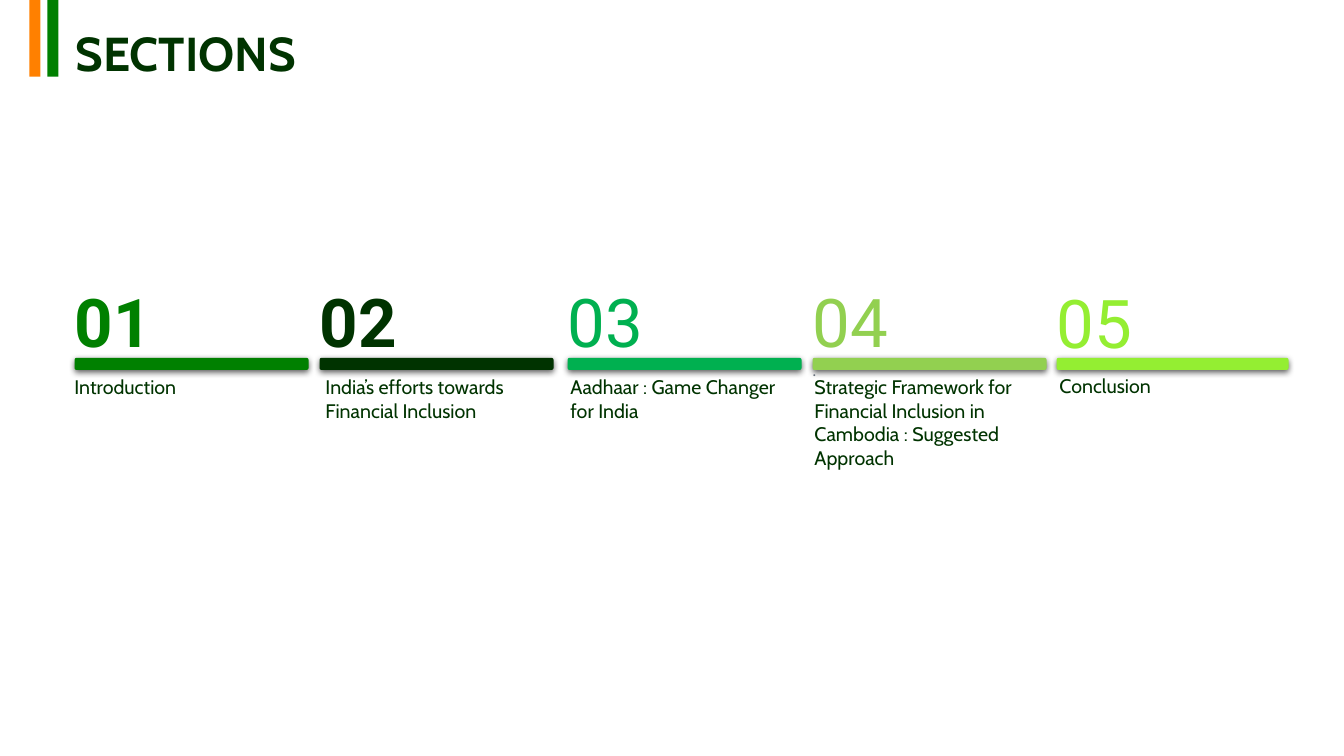
"""Build the SECTIONS agenda slide with five numbered, coloured bars."""
from dataclasses import dataclass

from lxml import etree
from pptx import Presentation
from pptx.dml.color import RGBColor
from pptx.enum.shapes import MSO_SHAPE as Preset
from pptx.enum.text import MSO_ANCHOR as Anchor
from pptx.enum.text import MSO_AUTO_SIZE as AutoSize
from pptx.enum.text import PP_ALIGN as Align
from pptx.oxml.ns import qn
from pptx.util import Emu, Pt

EMU_PER_PX = 9144
COLOURS = {
    "orange": "FF8000",
    "green": "008000",
    "dark": "003300",
    "emerald": "00B050",
    "lime": "92D050",
    "bright": "94EE32",
    "grey": "656D78",
    "black": "000000",
}


@dataclass(frozen=True)
class Box:
    left: int
    top: int
    width: int
    height: int

    def emu(self) -> list[Emu]:
        return [Emu(px * EMU_PER_PX) for px in (self.left, self.top, self.width, self.height)]


@dataclass(frozen=True)
class Section:
    label: str
    colour: str
    bar: Box
    number_box: Box
    label_box: Box
    bold: bool = False
    wrap: bool = True
    mark: str = ""


SECTIONS = [
    Section("Introduction", "green", Box(74, 355, 232, 12),
            Box(74, 278, 166, 192), Box(64, 367, 126, 34), bold=True, wrap=False),
    Section("India’s efforts towards Financial Inclusion", "dark", Box(317, 355, 232, 12),
            Box(317, 278, 180, 192), Box(313, 367, 237, 81), bold=True),
    Section("Aadhaar : Game Changer for India", "emerald", Box(563, 355, 232, 12),
            Box(563, 278, 159, 192), Box(556, 367, 237, 57)),
    Section("Strategic Framework for Financial Inclusion in Cambodia : Suggested Approach",
            "lime", Box(806, 355, 232, 12),
            Box(806, 278, 185, 193), Box(798, 367, 237, 151), mark="."),
    Section("Conclusion", "bright", Box(1048, 355, 230, 12),
            Box(1048, 279, 144, 192), Box(1041, 366, 113, 34), wrap=False),
]
STRIPES = {"orange": Box(29, 0, 11, 76), "green": Box(47, 0, 11, 76)}


def rgb(colour: str) -> RGBColor:
    return RGBColor.from_string(COLOURS[colour])


def write(paragraph, text: str, colour: str, **font_format) -> None:
    run = paragraph.add_run()
    run.text = text
    run.font.color.rgb = rgb(colour)
    for name, value in font_format.items():
        setattr(run.font, name, value)


def add_block(slide, preset: Preset, box: Box, colour: str):
    shape = slide.shapes.add_shape(preset, *box.emu())
    shape.shadow.inherit = False
    shape.fill.solid()
    shape.fill.fore_color.rgb = rgb(colour)
    shape.line.fill.background()
    return shape


def add_bar(slide, box: Box, colour: str) -> None:
    bar = add_block(slide, Preset.ROUNDED_RECTANGLE, box, colour)
    effects = bar.element.spPr.find(qn("a:effectLst"))
    shadow = etree.SubElement(effects, qn("a:outerShdw"), blurRad=str(Pt(4.5)),
                              dist=str(Pt(1.5)), dir="5400000", algn="t", rotWithShape="0")
    tint = etree.SubElement(shadow, qn("a:srgbClr"), val=COLOURS["black"])
    etree.SubElement(tint, qn("a:alpha"), val="63000")


def add_text_frame(slide, box: Box, **frame_format):
    frame = slide.shapes.add_textbox(*box.emu()).text_frame
    for name, value in frame_format.items():
        setattr(frame, name, value)
    return frame


def add_number(slide, number: int, section: Section) -> None:
    frame = add_text_frame(slide, section.number_box, word_wrap=True,
                           margin_left=0, margin_top=0, margin_bottom=0)
    write(frame.paragraphs[0], f"{number:02d}", section.colour,
          name="Roboto", size=Pt(48), bold=section.bold)
    if section.mark:
        write(frame.add_paragraph(), section.mark, "grey", name="Lato", size=Pt(11))


def add_label(slide, section: Section) -> None:
    frame = add_text_frame(slide, section.label_box, word_wrap=section.wrap,
                           auto_size=AutoSize.SHAPE_TO_FIT_TEXT)
    write(frame.paragraphs[0], section.label, "dark", name="Cabin", size=Pt(14))


def set_title(slide, text: str, box: Box) -> None:
    title = slide.shapes.title
    title.left, title.top, title.width, title.height = box.emu()
    frame = title.text_frame
    frame.auto_size = AutoSize.NONE
    frame.vertical_anchor = Anchor.MIDDLE
    paragraph = frame.paragraphs[0]
    paragraph.alignment = Align.LEFT
    paragraph.line_spacing = 0.9
    write(paragraph, text, "dark", name="Cabin", size=Pt(34), bold=True)


def main() -> None:
    presentation = Presentation()
    presentation.slide_width = Emu(1333 * EMU_PER_PX)
    presentation.slide_height = Emu(750 * EMU_PER_PX)
    slide = presentation.slides.add_slide(presentation.slide_layouts[5])
    set_title(slide, "SECTIONS", Box(65, 28, 1225, 55))
    for colour, box in STRIPES.items():
        add_block(slide, Preset.RECTANGLE, box, colour)
    for number, section in enumerate(SECTIONS, start=1):
        add_bar(slide, section.bar, section.colour)
        add_number(slide, number, section)
        add_label(slide, section)
    presentation.save("out.pptx")


if __name__ == "__main__":
    main()
